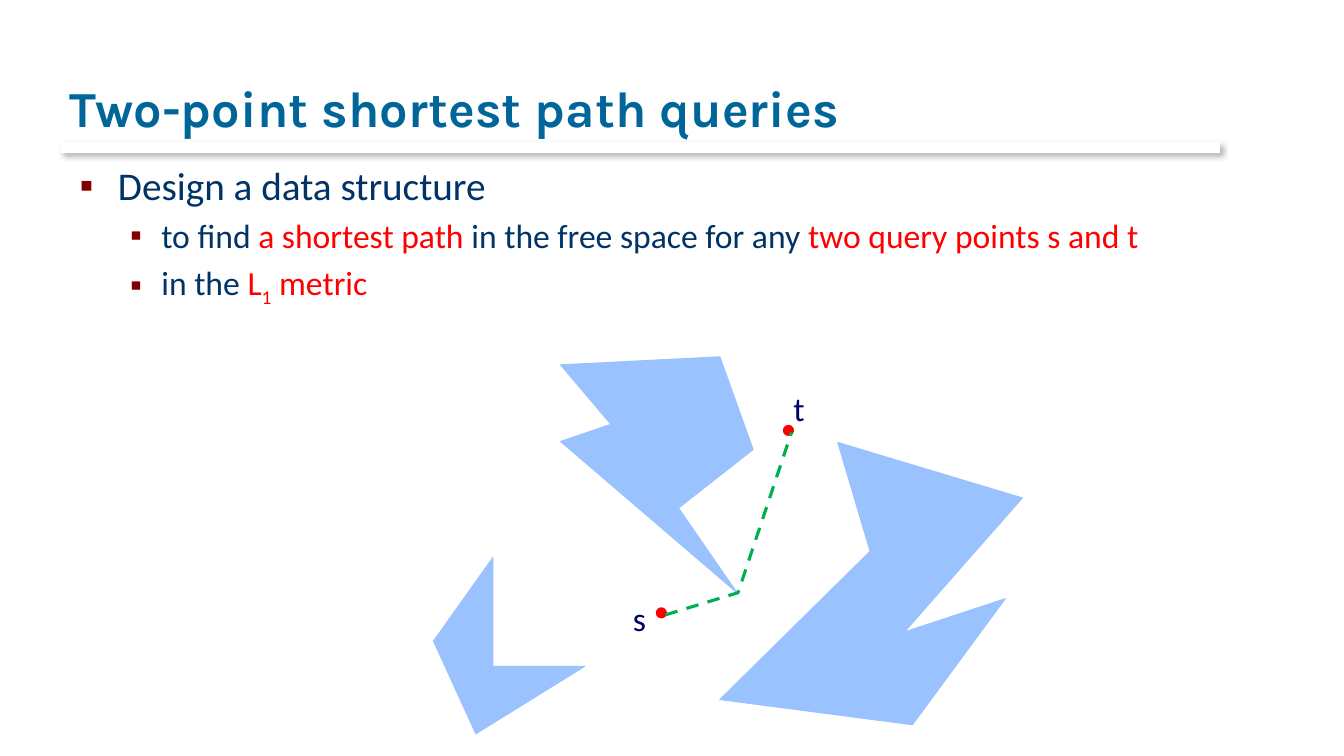
from lxml.etree import SubElement
from pptx import Presentation
from pptx.dml.color import RGBColor
from pptx.enum.dml import MSO_LINE_DASH_STYLE as Dash
from pptx.enum.shapes import MSO_SHAPE as Shape
from pptx.enum.text import MSO_ANCHOR as Anchor, MSO_AUTO_SIZE as AutoSize, PP_ALIGN as Align
from pptx.oxml.ns import qn
from pptx.util import Inches, Pt

COLORS = {
    "title": "006699",
    "body": "003366",
    "bullet": "800000",
    "accent": "FF0000",
    "obstacle": "99C2FF",
    "label": "000066",
    "path": "00B050",
    "rule": "FFFFFF",
    "shadow": "000000",
}


class SlideBuilder:
    title_font = "Karla"
    body_font = "Calibri"

    def __init__(self, slide):
        self.slide = slide
        self.shapes = slide.shapes

    def color(self, name):
        return RGBColor.from_string(COLORS[name])

    def place(self, shape, left, top, width, height):
        shape.left, shape.top = Inches(left), Inches(top)
        shape.width, shape.height = Inches(width), Inches(height)

    def style_font(self, font, name, size, color, bold=False):
        font.name, font.size, font.bold = name, Pt(size), bold
        font.color.rgb = self.color(color)

    def paint(self, shape, color):
        shape.shadow.inherit = False
        shape.fill.solid()
        shape.fill.fore_color.rgb = self.color(color)
        shape.line.color.rgb = self.color(color)
        shape.line.width = Pt(0.75)

    def rule(self, left, top, width, height):
        shape = self.shapes.add_shape(
            Shape.RECTANGLE, Inches(left), Inches(top), Inches(width), Inches(height))
        self.paint(shape, "rule")
        shape.line.fill.background()
        effects = shape._element.spPr.find(qn("a:effectLst"))
        shadow = SubElement(effects, qn("a:outerShdw"), blurRad=str(Pt(4)),
                            dist=str(Pt(3)), dir="2700000", algn="tl", rotWithShape="0")
        shade = SubElement(shadow, qn("a:srgbClr"), val=COLORS["shadow"])
        SubElement(shade, qn("a:alpha"), val="30000")

    def title(self, text, *box):
        shape = self.shapes.title
        self.place(shape, *box)
        frame = shape.text_frame
        frame.text = text
        frame.word_wrap = True
        frame.auto_size = AutoSize.NONE
        frame.vertical_anchor = Anchor.BOTTOM
        paragraph = frame.paragraphs[0]
        paragraph.alignment = Align.LEFT
        run = paragraph.runs[0]
        self.style_font(run.font, self.title_font, 36, "title", bold=True)
        run._r.get_or_add_rPr().set("spc", "10")

    def bullet(self, paragraph, margin, indent):
        properties = paragraph._p.get_or_add_pPr()
        properties.set("marL", str(Inches(margin)))
        properties.set("indent", str(Inches(indent)))
        color = SubElement(properties, qn("a:buClr"))
        SubElement(color, qn("a:srgbClr"), val=COLORS["bullet"])
        SubElement(properties, qn("a:buFont"), typeface="Arial")
        SubElement(properties, qn("a:buChar"), char="▪")

    def bullets(self, items, *box):
        shape = self.slide.placeholders[1]
        self.place(shape, *box)
        frame = shape.text_frame
        frame.word_wrap = True
        frame.auto_size = AutoSize.NONE
        for index, (level, runs) in enumerate(items):
            paragraph = frame.paragraphs[0] if index == 0 else frame.add_paragraph()
            paragraph.level = level
            size, margin, indent = ((28, 0.38, -0.38), (24, 0.81, -0.31))[level]
            self.bullet(paragraph, margin, indent)
            paragraph.space_before = Pt(4.8 if index else 0)
            for text, color, baseline in runs:
                run = paragraph.add_run()
                run.text = text
                self.style_font(run.font, self.body_font, size, color)
                if baseline:
                    run._r.get_or_add_rPr().set("baseline", str(baseline * 1000))

    def outline(self, points, close):
        start, *others = [(Inches(x), Inches(y)) for x, y in points]
        builder = self.shapes.build_freeform(*start)
        builder.add_line_segments(others, close=close)
        return builder.convert_to_shape()

    def obstacle(self, points):
        self.paint(self.outline(points, True), "obstacle")

    def dashed_path(self, points):
        shape = self.outline(points, False)
        shape.shadow.inherit = False
        shape.fill.background()
        shape.line.color.rgb = self.color("path")
        shape.line.width = Pt(2.25)
        shape.line.dash_style = Dash.DASH

    def dot(self, left, top):
        shape = self.shapes.add_shape(
            Shape.OVAL, Inches(left), Inches(top), Inches(0.1), Inches(0.1))
        self.paint(shape, "accent")

    def label(self, text, left, top, width):
        shape = self.shapes.add_textbox(
            Inches(left), Inches(top), Inches(width), Inches(0.5))
        frame = shape.text_frame
        frame.text = text
        frame.word_wrap = False
        frame.auto_size = AutoSize.SHAPE_TO_FIT_TEXT
        self.style_font(frame.paragraphs[0].runs[0].font, self.body_font, 24, "label")


def main():
    presentation = Presentation()
    presentation.slide_width, presentation.slide_height = Inches(13.33), Inches(7.5)
    builder = SlideBuilder(presentation.slides.add_slide(presentation.slide_layouts[1]))

    builder.rule(0.6, 1.41, 11.5, 0.11)
    builder.title("Two-point shortest path queries", 0.59, 0.17, 11.33, 1.25)
    builder.bullets([
        (0, [("Design a data structure", "body", 0)]),
        (1, [("to find ", "body", 0), ("a shortest path ", "accent", 0),
             ("in the free space for any ", "body", 0),
             ("two query points s and t", "accent", 0)]),
        (1, [("in the ", "body", 0), ("L", "accent", 0),
             ("1", "accent", -25), (" metric", "accent", 0)]),
    ], 0.69, 1.55, 11.89, 1.6)

    obstacles = [
        [(8.31, 4.39), (8.63, 5.47), (7.14, 6.94), (9.05, 7.19),
         (9.97, 5.94), (8.97, 6.27), (10.14, 4.94)],
        [(7.14, 3.54), (5.56, 3.62), (6.06, 4.21), (5.56, 4.38),
         (7.31, 5.88), (6.73, 5.04), (7.47, 4.46)],
        [(4.89, 5.53), (4.3, 6.36), (4.72, 7.28), (5.8, 6.61), (4.89, 6.61)],
    ]
    for points in obstacles:
        builder.obstacle(points)

    builder.dot(6.51, 6.03)
    builder.dot(7.77, 4.22)
    builder.label("s", 6.18, 5.88, 0.33)
    builder.label("t", 7.77, 3.8, 0.31)
    builder.dashed_path([(6.6, 6.1), (7.32, 5.88), (7.85, 4.29)])
    presentation.save("out.pptx")


if __name__ == "__main__":
    main()
